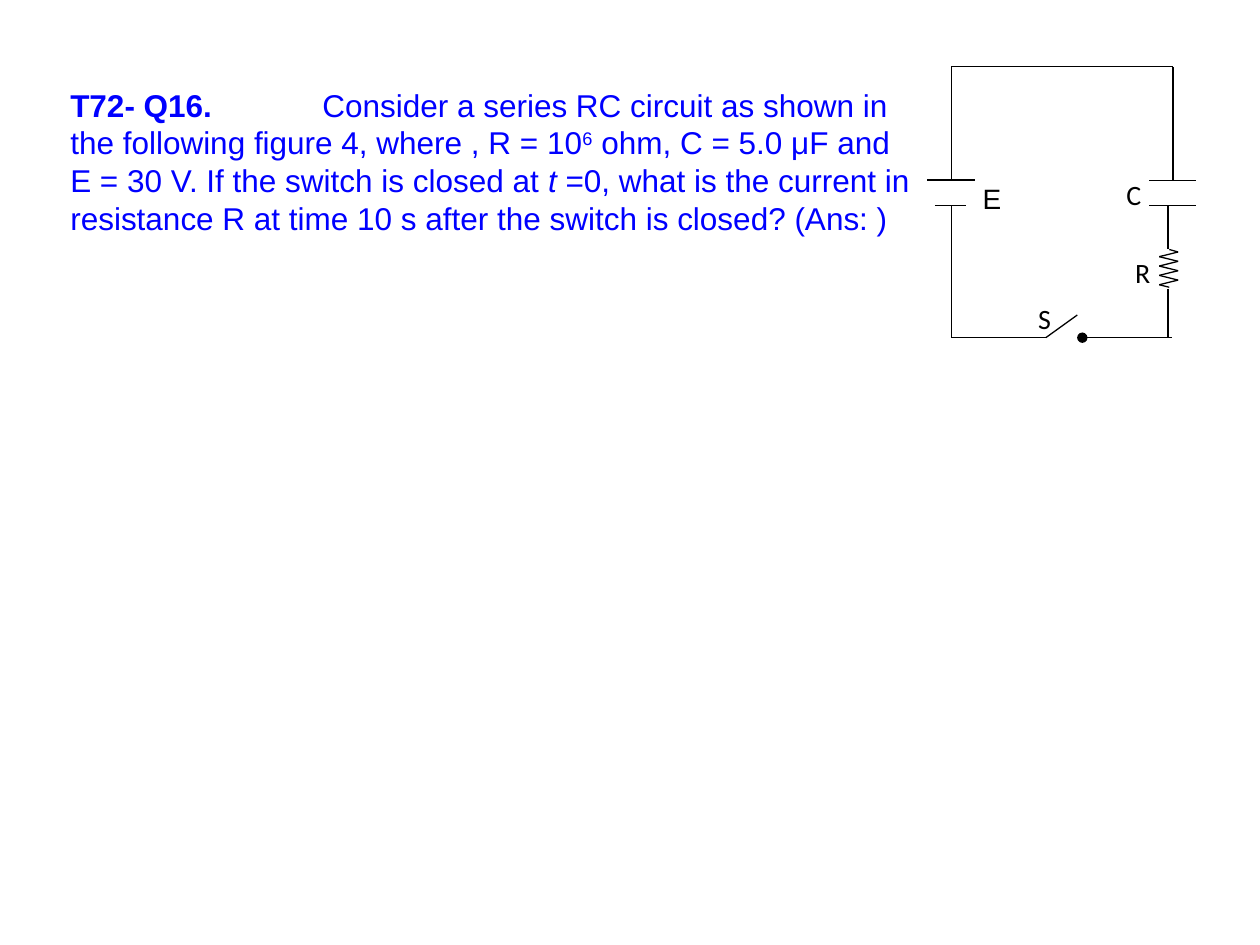
from itertools import pairwise
from pptx import Presentation
from pptx.dml.color import RGBColor
from pptx.enum.shapes import MSO_CONNECTOR, MSO_SHAPE
from pptx.enum.text import MSO_ANCHOR, MSO_AUTO_SIZE, PP_ALIGN
from pptx.oxml.ns import qn
from pptx.util import Inches, Pt
from lxml.etree import SubElement

BLACK = RGBColor(0, 0, 0)
WHITE = RGBColor(255, 255, 255)
BLUE = RGBColor(0, 0, 255)

deck = Presentation()
deck.slide_width, deck.slide_height = Inches(10), Inches(7.5)
slide = deck.slides.add_slide(deck.slide_layouts[6])
shapes = slide.shapes


def wire(x1, y1, x2, y2, width=0.75):
    line = shapes.add_connector(MSO_CONNECTOR.STRAIGHT, Inches(x1), Inches(y1), Inches(x2), Inches(y2))
    line.line.color.rgb = BLACK
    line.line.width = Pt(width)
    SubElement(line._element.spPr, qn("a:effectLst"))
    return line


def style(run, font, size, color):
    run.font.name = font
    run.font.size = Pt(size)
    run.font.color.rgb = color


box = shapes.add_textbox(Inches(0.46), Inches(0.63), Inches(7), Inches(1.31))
box.text_frame.word_wrap = True
box.text_frame.margin_right = Inches(0.2)
para = box.text_frame.paragraphs[0]
tabs = SubElement(para._p.get_or_add_pPr(), qn("a:tabLst"))
SubElement(tabs, qn("a:tab"), pos=str(Inches(2)), algn="l")
parts = [
    ("T72- Q16.", "bold"),
    ("\tConsider a series RC circuit as shown in the following figure 4, where , R = 10", ""),
    ("6", "super"),
    (" ohm, C = 5.0 μF and E = 30 V. If the switch is closed at ", ""),
    ("t ", "italic"),
    ("=0, what is the current in resistance R at time 10 s after the switch is closed? (Ans: )", ""),
]
for text, look in parts:
    run = para.add_run()
    run.text = text
    style(run, "Arial", 18, BLUE)
    run.font.bold = look == "bold"
    run.font.italic = look == "italic"
    if look == "super":
        run.font._element.set("baseline", "30000")

labels = [
    ("S", 8.11, 2.32, 0.38, 0.36),
    ("R", 8.88, 1.96, 0.46, 0.51),
    ("C", 8.81, 1.34, 0.38, 0.36),
    ("", 7.68, 1.37, 0.54, 0.73),
]
for text, *place in labels:
    label = shapes.add_shape(MSO_SHAPE.RECTANGLE, *map(Inches, place))
    label.shadow.inherit = False
    label.fill.solid()
    label.fill.fore_color.rgb = WHITE
    label.line.color.rgb = WHITE
    label.line.width = Pt(0.75)
    if text:
        frame = label.text_frame
        frame.text = text
        frame.vertical_anchor = MSO_ANCHOR.TOP
        frame.margin_left = frame.margin_right = Inches(0.13)
        frame.margin_top = frame.margin_bottom = Inches(0.07)
        para = frame.paragraphs[0]
        para.alignment = PP_ALIGN.LEFT
        para.space_after = Pt(10)
        style(para.runs[0], "Calibri", 16, BLACK)

left, right, stem = 7.55, 9.31, 9.27
top, base = 0.53, 2.68
upper, lower = 1.43, 1.63

wire(left, top, right, top)
wire(left, top, left, upper)
wire(7.36, upper, 7.74, upper, 1)
wire(7.42, lower, 7.67, lower, 1)
wire(left, lower, left, base)
wire(right, top, right, upper)
for y in (upper, lower):
    wire(9.12, y, 9.49, y)
wire(stem, lower, stem, 1.98)
wire(stem, 2.29, stem, base)

turns = [(9.2 if i % 2 else 9.35, 2 + i * 0.26 / 7) for i in range(8)]
for start, end in pairwise([(9.28, 1.98), *turns, (9.28, 2.28)]):
    wire(*start, *end)

wire(left, base, 8.31, base)
wire(8.3, base, 8.55, 2.5)
lead = wire(9.3, base, 8.59, base)
SubElement(lead.line._get_or_add_ln(), qn("a:tailEnd"), type="oval")

cell = shapes.add_textbox(Inches(7.7), Inches(1.39), Inches(0.35), Inches(0.37))
cell.text_frame.text = "E"
cell.text_frame.word_wrap = False
cell.text_frame.auto_size = MSO_AUTO_SIZE.SHAPE_TO_FIT_TEXT
style(cell.text_frame.paragraphs[0].runs[0], "Arial", 16, BLACK)

deck.save("out.pptx")
